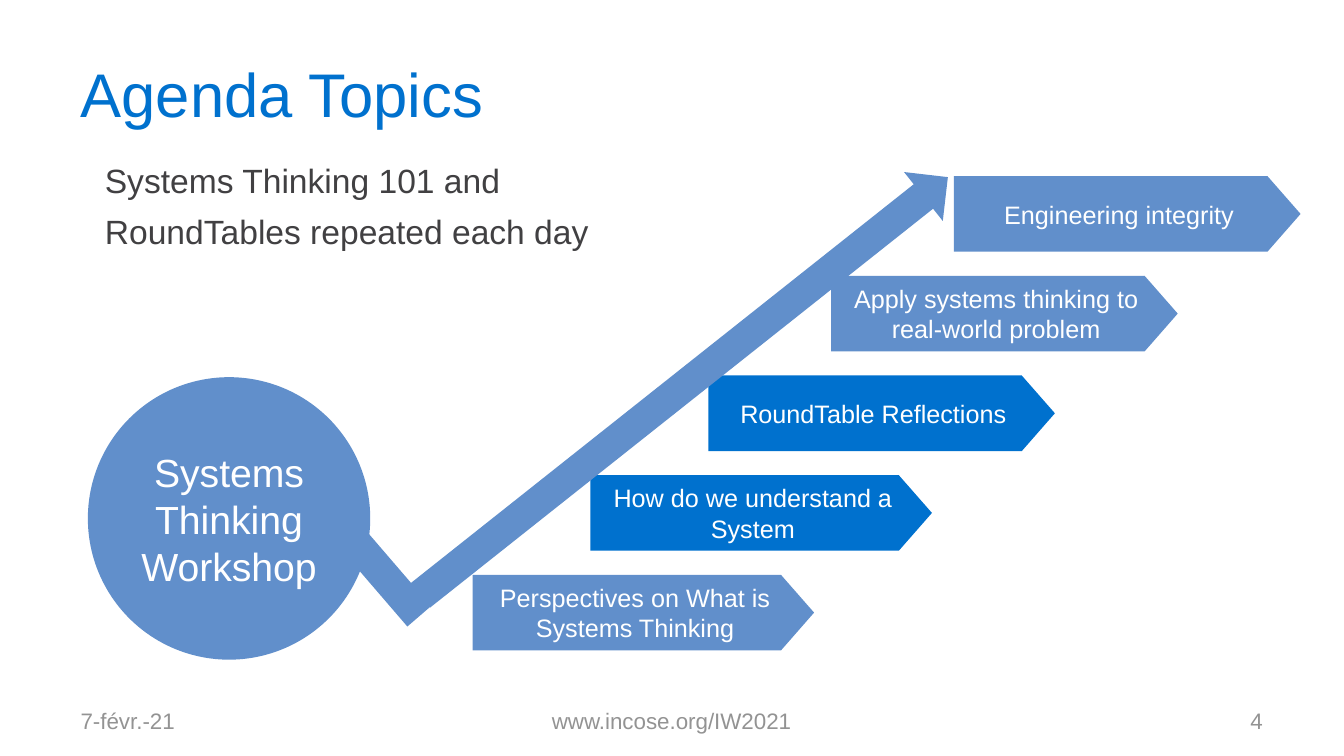
"""Build the agenda slide: a workshop circle, a rising arrow and five topic plates."""
from pptx import Presentation
from pptx.dml.color import RGBColor
from pptx.enum.shapes import MSO_SHAPE
from pptx.enum.text import MSO_ANCHOR, PP_ALIGN
from pptx.util import Pt

SOFT_BLUE = RGBColor(0x61, 0x8F, 0xCB)
DEEP_BLUE = RGBColor(0x00, 0x71, 0xCE)
DARK_GREY = RGBColor(0x41, 0x40, 0x42)
FOOTER_GREY = RGBColor(0x93, 0x93, 0x93)
WHITE = RGBColor(0xFF, 0xFF, 0xFF)

TITLE = "Agenda Topics"
INTRO = "Systems Thinking 101 and RoundTables repeated each day"
WORKSHOP = "Systems Thinking Workshop"
TOPICS = [
    ("Perspectives on What is Systems Thinking", SOFT_BLUE, 337.7, 244.1),
    ("How do we understand a System", DEEP_BLUE, 421.9, 244.1),
    ("RoundTable Reflections", DEEP_BLUE, 506.2, 247.7),
    ("Apply systems thinking to real-world problem", SOFT_BLUE, 594, 247.7),
    ("Engineering integrity", SOFT_BLUE, 681.8, 247.7),
]
FOOTERS = [
    ("7-févr.-21", 48, 224, PP_ALIGN.LEFT),
    ("www.incose.org/IW2021", 328, 304, PP_ALIGN.CENTER),
    ("4", 688, 224, PP_ALIGN.RIGHT),
]
FIRST_TOPIC_TOP, TOPIC_STEP, TOPIC_HEIGHT = 410.6, 71.2, 54


def write(frame, text, size, color, align):
    frame.word_wrap = True
    paragraph = frame.paragraphs[0]
    paragraph.text = text
    paragraph.alignment = align
    paragraph.font.name = "Arial"
    paragraph.font.size = Pt(size)
    paragraph.font.color.rgb = color
    return paragraph


def add_block(slide, kind, box, fill, text="", size=18, rotation=0):
    block = slide.shapes.add_shape(kind, *map(Pt, box))
    block.shadow.inherit = False
    block.fill.solid()
    block.fill.fore_color.rgb = fill
    block.line.fill.background()
    block.rotation = rotation
    if text:
        block.text_frame.vertical_anchor = MSO_ANCHOR.MIDDLE
        write(block.text_frame, text, size, WHITE, PP_ALIGN.CENTER)
    return block


def add_label(slide, box, text, size, color, align=PP_ALIGN.LEFT):
    frame = slide.shapes.add_textbox(*map(Pt, box)).text_frame
    frame.vertical_anchor = MSO_ANCHOR.MIDDLE
    frame.margin_left = frame.margin_right = Pt(9.6)
    frame.margin_top = frame.margin_bottom = Pt(4.8)
    write(frame, text, size, color, align)


def main():
    deck = Presentation()
    deck.slide_width, deck.slide_height = Pt(960.5), Pt(540)
    slide = deck.slides.add_slide(deck.slide_layouts[6])

    for step, (topic, fill, left, width) in enumerate(TOPICS):
        top = FIRST_TOPIC_TOP - step * TOPIC_STEP
        box = (left, top, width, TOPIC_HEIGHT)
        plate = add_block(slide, MSO_SHAPE.PENTAGON, box, fill, topic)
        plate.adjustments[0] = 0.438

    add_block(slide, MSO_SHAPE.RIGHT_ARROW, (248.4, 253.6, 481, 44.6), SOFT_BLUE, rotation=321.6)
    add_block(slide, MSO_SHAPE.RECTANGLE, (238.3, 401, 74.2, 22.3), SOFT_BLUE, rotation=49.3)
    add_block(slide, MSO_SHAPE.OVAL, (62.8, 269.4, 201.8, 201.8), SOFT_BLUE, WORKSHOP, 28)

    intro = slide.shapes.add_textbox(Pt(67.9), Pt(103.7), Pt(372.2), Pt(113))
    write(intro.text_frame, INTRO, 24, DARK_GREY, PP_ALIGN.LEFT).line_spacing = 1.25

    add_label(slide, (48, 21.6, 864.7, 90), TITLE, 44, DEEP_BLUE)
    for text, left, width, align in FOOTERS:
        add_label(slide, (left, 500.5, width, 28.8), text, 16, FOOTER_GREY, align)

    deck.save("out.pptx")


if __name__ == "__main__":
    main()
